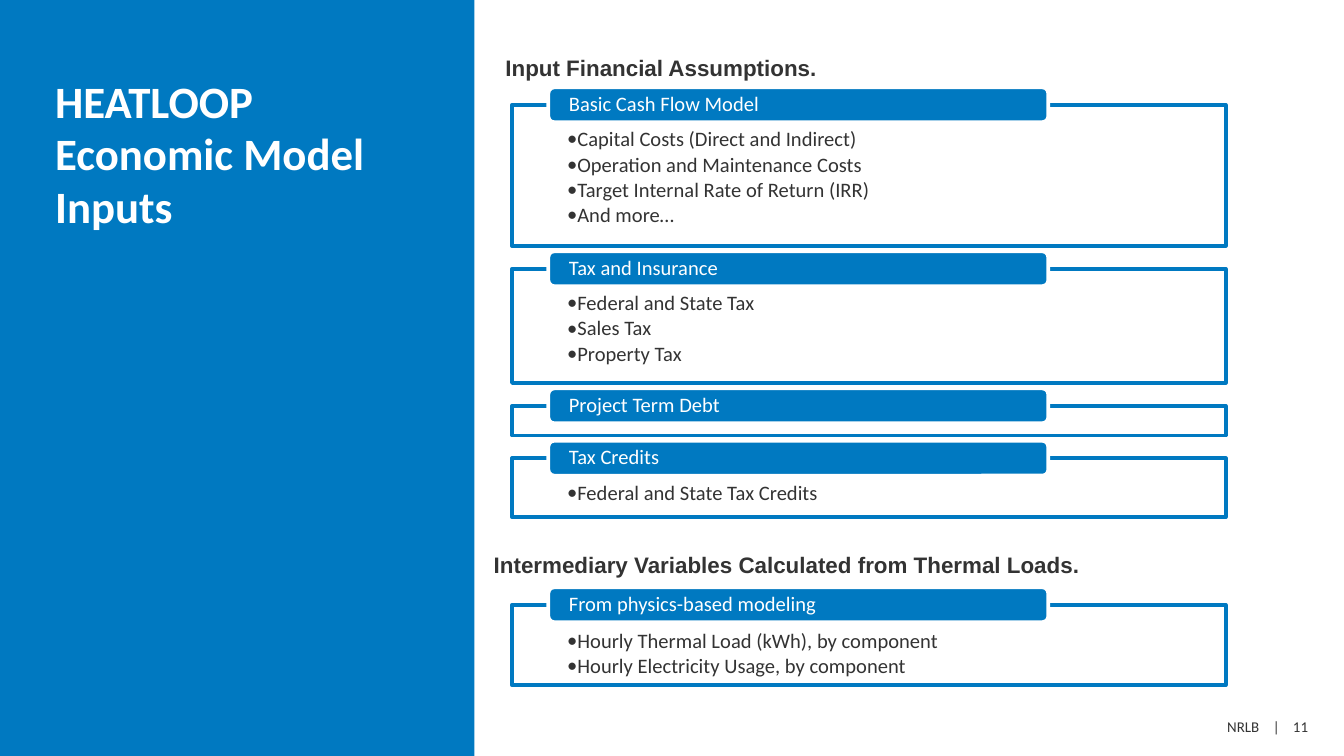
from dataclasses import dataclass

from lxml import etree
from pptx import Presentation
from pptx.dml.color import RGBColor
from pptx.enum import shapes, text
from pptx.oxml import ns
from pptx.util import Inches, Pt


@dataclass(frozen=True)
class Theme:
    blue: RGBColor = RGBColor(0x00, 0x79, 0xC1)
    white: RGBColor = RGBColor(0xFF, 0xFF, 0xFF)
    ink: RGBColor = RGBColor(0x33, 0x33, 0x33)
    body_font: str = "Calibri"
    heading_font: str = "Arial"
    title_size: int = 24
    heading_size: int = 12
    body_size: int = 11
    footer_size: int = 8


THEME = Theme()
SLIDE_WIDTH = Inches(10)
SLIDE_HEIGHT = SLIDE_WIDTH * 9 // 16
FRAME_LEFT, FRAME_WIDTH, FRAME_GAP = 3.81, 5.31, 0.17
TAB_LEFT, TAB_WIDTH, TAB_HEIGHT, TAB_RISE = 4.08, 3.72, 0.26, 0.13

ASSUMPTIONS = [
    ("Basic Cash Flow Model", 1.05, [
        "Capital Costs (Direct and Indirect)",
        "Operation and Maintenance Costs",
        "Target Internal Rate of Return (IRR)",
        "And more…",
    ]),
    ("Tax and Insurance", 0.85, ["Federal and State Tax", "Sales Tax", "Property Tax"]),
    ("Project Term Debt", 0.22, []),
    ("Tax Credits", 0.44, ["Federal and State Tax Credits"]),
]
LOADS = [
    ("From physics-based modeling", 0.6, [
        "Hourly Thermal Load (kWh), by component",
        "Hourly Electricity Usage, by component",
    ]),
]


def set_font(paragraph, size, color, name=THEME.body_font, bold=False):
    font = paragraph.font
    font.size, font.name, font.bold = Pt(size), name, bold
    font.color.rgb = color


def set_insets(frame, left, top, right, bottom):
    frame.margin_left, frame.margin_top = Inches(left), Inches(top)
    frame.margin_right, frame.margin_bottom = Inches(right), Inches(bottom)


def add_block(slide, preset, box, fill, line=None):
    block = slide.shapes.add_shape(preset, *map(Inches, box))
    block.shadow.inherit = False
    block.fill.solid()
    block.fill.fore_color.rgb = fill
    if line is None:
        block.line.fill.background()
    else:
        block.line.color.rgb = line
        block.line.width = Pt(2)
    return block


def set_bullet(paragraph, indent):
    properties = paragraph._p.get_or_add_pPr()
    properties.set("marL", str(Inches(indent)))
    properties.set("indent", str(-Inches(indent)))
    etree.SubElement(properties, ns.qn("a:buFont"), typeface=THEME.body_font)
    etree.SubElement(properties, ns.qn("a:buChar"), char="•")


def add_frame(slide, top, height, items, text_top):
    frame = add_block(slide, shapes.MSO_SHAPE.RECTANGLE,
                      (FRAME_LEFT, top, FRAME_WIDTH, height), THEME.white, THEME.blue)
    color = frame.element.spPr.find(".//" + ns.qn("a:srgbClr"))
    etree.SubElement(color, ns.qn("a:alpha"), val="90000")
    if not items:
        return
    body = frame.text_frame
    body.text = "\n".join(items)
    body.vertical_anchor = text.MSO_ANCHOR.TOP
    set_insets(body, 0.41, text_top, 0.41, 0.06)
    for paragraph in body.paragraphs:
        paragraph.alignment = text.PP_ALIGN.LEFT
        paragraph.level = 1
        paragraph.line_spacing = 0.9
        paragraph.space_after = Pt(1.65)
        set_bullet(paragraph, 0.06)
        set_font(paragraph, THEME.body_size, THEME.ink)


def add_tab(slide, top, label):
    tab = add_block(slide, shapes.MSO_SHAPE.ROUNDED_RECTANGLE,
                    (TAB_LEFT, top, TAB_WIDTH, TAB_HEIGHT), THEME.blue, THEME.white)
    tab.text_frame.text = label
    tab.text_frame.vertical_anchor = text.MSO_ANCHOR.MIDDLE
    set_insets(tab.text_frame, 0.14, 0, 0.14, 0)
    paragraph = tab.text_frame.paragraphs[0]
    paragraph.alignment = text.PP_ALIGN.LEFT
    paragraph.line_spacing = 0.9
    set_font(paragraph, THEME.body_size, THEME.white)


def add_sections(slide, top, sections, text_top=0.18):
    for label, height, items in sections:
        add_frame(slide, top, height, items, text_top)
        add_tab(slide, top - TAB_RISE, label)
        top += height + FRAME_GAP


def add_heading(slide, left, top, width, wording):
    heading = slide.shapes.add_textbox(*map(Inches, (left, top, width, 0.28))).text_frame
    heading.text = wording
    heading.word_wrap = False
    heading.vertical_anchor = text.MSO_ANCHOR.MIDDLE
    set_insets(heading, 0.07, 0.04, 0.07, 0.04)
    paragraph = heading.paragraphs[0]
    paragraph.alignment = text.PP_ALIGN.CENTER
    set_font(paragraph, THEME.heading_size, THEME.ink, THEME.heading_font, True)


def add_title_panel(slide, wording):
    panel = add_block(slide, shapes.MSO_SHAPE.RECTANGLE, (0, 0, 3.53, 5.62), THEME.blue)
    panel.height = SLIDE_HEIGHT
    title = slide.shapes.title
    panel.element.addnext(title.element)
    title.left, title.top = Inches(0.41), Inches(0.56)
    title.width, title.height = Inches(2.77), Inches(1.2)
    title.text_frame.text = wording
    title.text_frame.word_wrap = True
    title.text_frame.auto_size = text.MSO_AUTO_SIZE.NONE
    title.text_frame.vertical_anchor = text.MSO_ANCHOR.TOP
    set_insets(title.text_frame, 0, 0, 0, 0)
    paragraph = title.text_frame.paragraphs[0]
    paragraph.alignment = text.PP_ALIGN.LEFT
    paragraph.line_spacing = Pt(28)
    set_font(paragraph, THEME.title_size, THEME.white, bold=True)


def add_footer(slide, parts, stops):
    footer = slide.shapes.add_textbox(*map(Inches, (7.34, 5.29, 2.49, 0.24))).text_frame
    footer.text = "\t".join(parts)
    footer.word_wrap = True
    set_insets(footer, 1.79, 0.05, 0, 0.05)
    paragraph = footer.paragraphs[0]
    tab_list = etree.SubElement(paragraph._p.get_or_add_pPr(), ns.qn("a:tabLst"))
    for stop in stops:
        etree.SubElement(tab_list, ns.qn("a:tab"), pos=str(Inches(stop)), algn="l")
    set_font(paragraph, THEME.footer_size, THEME.ink)


def main():
    deck = Presentation()
    deck.slide_width, deck.slide_height = SLIDE_WIDTH, SLIDE_HEIGHT
    slide = deck.slides.add_slide(deck.slide_layouts[5])
    add_title_panel(slide, "HEATLOOP Economic Model\vInputs")
    add_heading(slide, 3.67, 0.36, 2.5, "Input Financial Assumptions.")
    add_sections(slide, 0.78, ASSUMPTIONS)
    add_heading(slide, 3.58, 4.06, 4.55,
                "Intermediary Variables Calculated from Thermal Loads.")
    add_sections(slide, 4.5, LOADS, text_top=0.19)
    add_footer(slide, ("NRLB", "|", "11"), (0.34, 0.49))
    deck.save("out.pptx")


if __name__ == "__main__":
    main()
